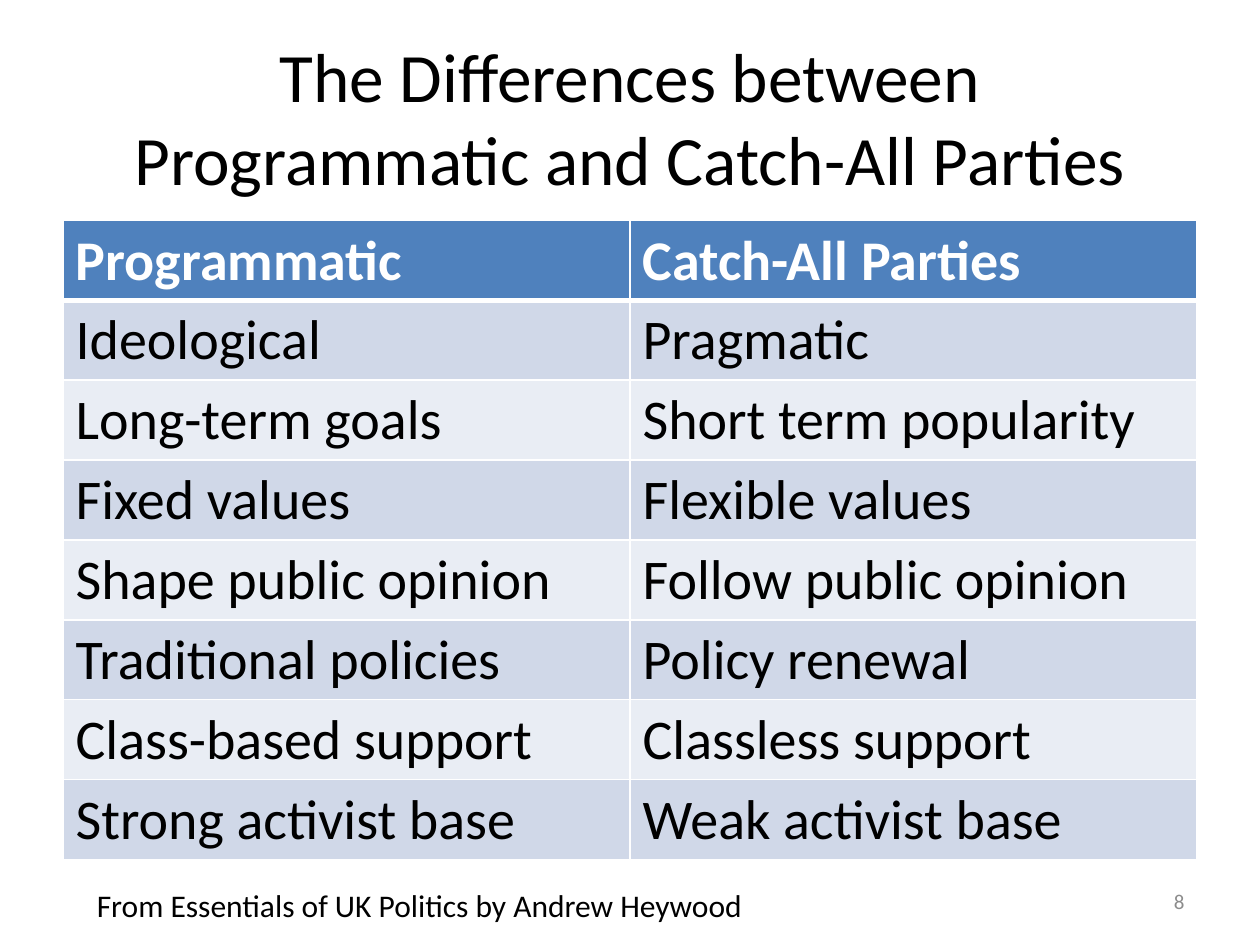
"""Build a slide comparing programmatic and catch-all parties in a table."""
import pptx
import pptx.dml.color
import pptx.enum.text
import pptx.oxml
import pptx.oxml.ns
import pptx.util

Inches = pptx.util.Inches
Pt = pptx.util.Pt
ALIGN = pptx.enum.text.PP_ALIGN
ANCHOR = pptx.enum.text.MSO_ANCHOR

COLORS = {
    "text": "000000",
    "white": "FFFFFF",
    "header": "4F81BD",
    "band_dark": "D0D8E8",
    "band_light": "E9EDF4",
    "number": "8C8C8C",
}

PARTIES = [
    ("Programmatic", "Catch-All Parties"),
    ("Ideological", "Pragmatic"),
    ("Long-term goals", "Short term popularity"),
    ("Fixed values", "Flexible values"),
    ("Shape public opinion", "Follow public opinion"),
    ("Traditional policies", "Policy renewal"),
    ("Class-based support", "Classless support"),
    ("Strong activist base", "Weak activist base"),
]


def rgb(name):
    return pptx.dml.color.RGBColor.from_string(COLORS[name])


def write(tf, text, size, color="text", bold=False, align=ALIGN.LEFT):
    p = tf.paragraphs[0]
    p.alignment = align
    r = p.add_run()
    r.text = text
    formats = {"name": "Calibri", "size": Pt(size), "bold": bold}
    for key, value in formats.items():
        setattr(r.font, key, value)
    r.font.color.rgb = rgb(color)


def add_text(s, box, text, size, anchor=ANCHOR.TOP, **style):
    sp = s.shapes.add_textbox(*map(Inches, box))
    tf = sp.text_frame
    tf.word_wrap = True
    tf.vertical_anchor = anchor
    write(tf, text, size, **style)


def set_borders(cell, widths):
    tc_pr = cell._tc.get_or_add_tcPr()
    for i, side in enumerate("LRTB"):
        ln = pptx.oxml.parse_xml(
            f'<a:ln{side} {pptx.oxml.ns.nsdecls("a")} w="{Pt(widths.get(side, 1))}">'
            f'<a:solidFill><a:srgbClr val="{COLORS["white"]}"/></a:solidFill>'
            f'</a:ln{side}>'
        )
        tc_pr.insert(i, ln)


def add_party_table(s, left, top, col_width, row_height):
    n_rows, n_cols = len(PARTIES), len(PARTIES[0])
    size = (col_width * n_cols, row_height * n_rows)
    table = s.shapes.add_table(n_rows, n_cols, *map(Inches, (left, top, *size))).table
    for i, row in enumerate(PARTIES):
        is_header = i == 0
        band = "band_dark" if i % 2 else "band_light"
        widths = {0: {"B": 3}, 1: {"T": 3}}.get(i, {})
        for j, text in enumerate(row):
            cell = table.cell(i, j)
            cell.fill.solid()
            cell.fill.fore_color.rgb = rgb("header" if is_header else band)
            set_borders(cell, widths)
            write(cell.text_frame, text, 32,
                  color="white" if is_header else "text", bold=is_header)


def main():
    prs = pptx.Presentation()
    prs.slide_width, prs.slide_height = Inches(10), Inches(7.5)
    s = prs.slides.add_slide(prs.slide_layouts[6])
    add_text(s, (0.5, 0.3, 9, 1.25),
             "The Differences between Programmatic and Catch-All Parties",
             39.6, ANCHOR.MIDDLE, align=ALIGN.CENTER)
    add_party_table(s, 0.5, 1.75, 4.5, 0.63)
    add_text(s, (0.67, 6.98, 8.03, 0.4),
             "From Essentials of UK Politics by Andrew Heywood", 18)
    add_text(s, (7.17, 6.95, 2.33, 0.4), "8", 12, ANCHOR.MIDDLE,
             color="number", align=ALIGN.RIGHT)
    prs.save("out.pptx")


if __name__ == "__main__":
    main()
